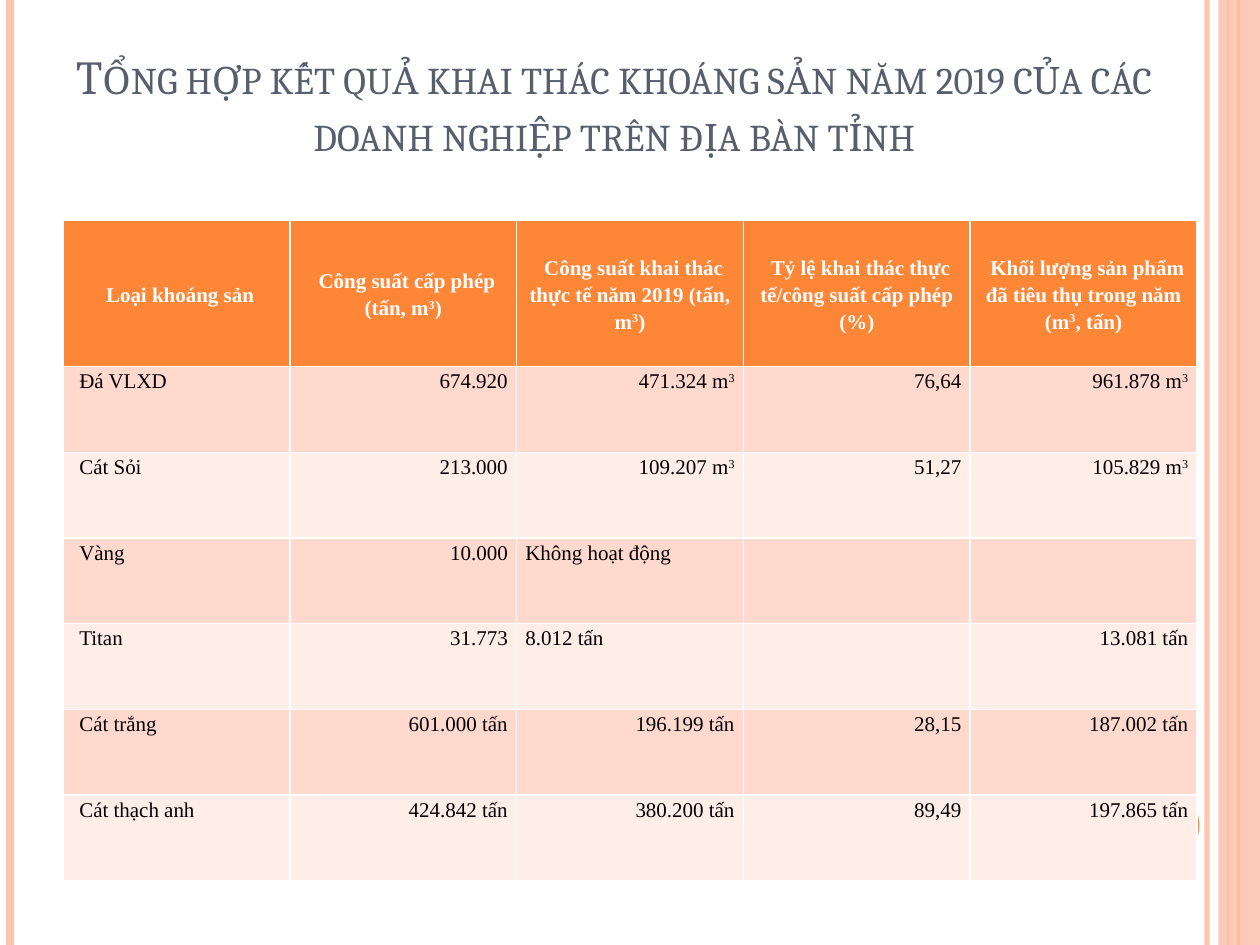
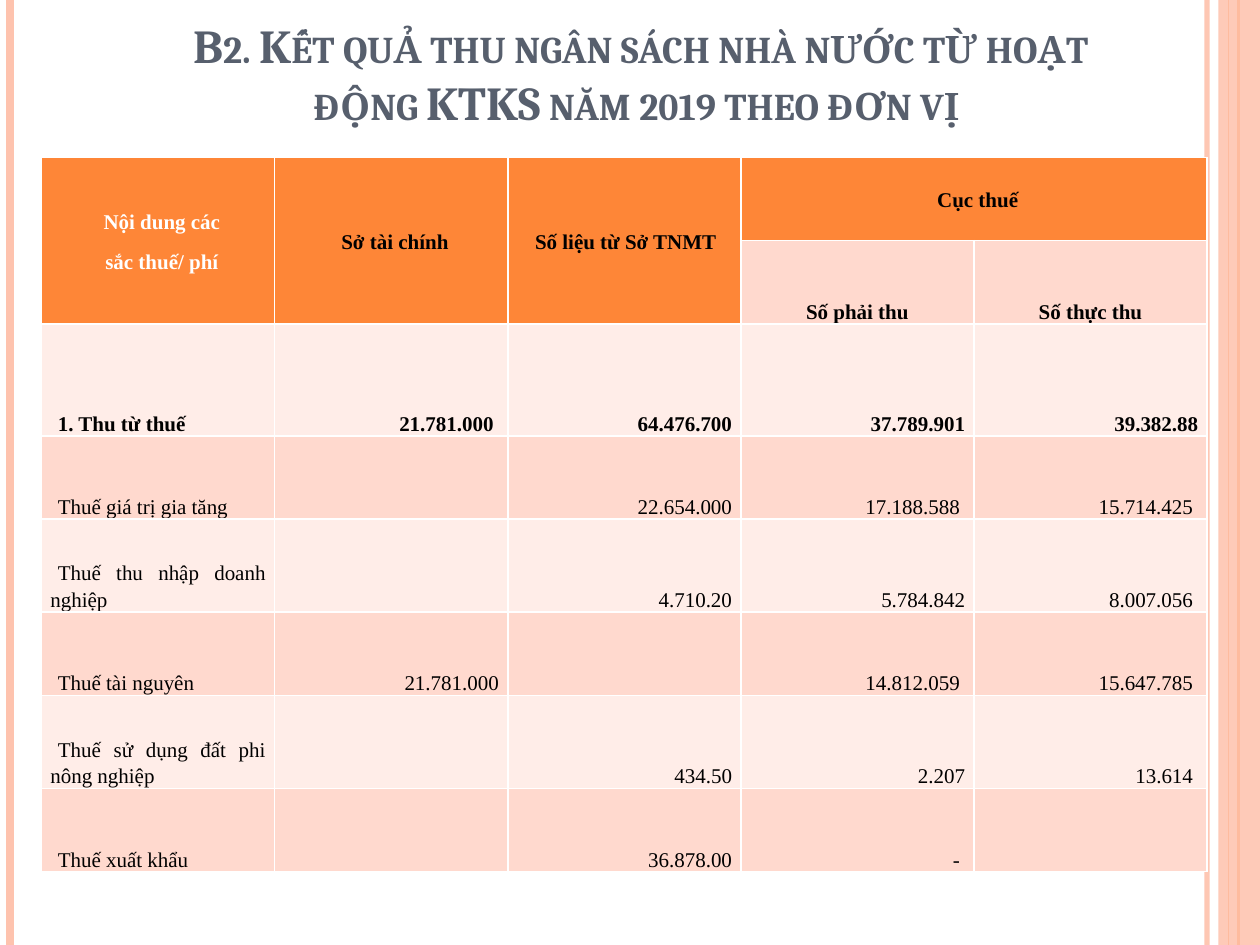
from lxml.etree import SubElement
from pptx import Presentation
from pptx.dml.color import RGBColor
from pptx.enum.shapes import MSO_CONNECTOR, MSO_SHAPE
from pptx.enum.text import MSO_ANCHOR, MSO_AUTO_SIZE, PP_ALIGN
from pptx.oxml.ns import qn
from pptx.util import Inches, Pt

COLORS = {
    "accent": "FE8637",
    "peach": "FEC3AE",
    "title": "575F6D",
    "band_dark": "FFD9CE",
    "band_light": "FFEDE8",
    "white": "FFFFFF",
    "black": "000000",
}
TITLE_FONT, TABLE_FONT = "Cambria", "Times New Roman"
# x, colour, width in points, opacity in percent
RULES = [(9.58, "peach", 3, 93), (0.08, "peach", 4.5, 100),
         (9.83, "accent", 1.5, 100), (9.75, "accent", 0.75, 100)]


def rgb(name):
    return RGBColor.from_string(COLORS[name])


def set_opacity(fill_parent, percent):
    color = next(fill_parent.iter(qn("a:srgbClr")))
    SubElement(color, qn("a:alpha")).set("val", str(percent * 1000))


def write(tf, text, font=TABLE_FONT, size=12, color="black", bold=False,
          align=PP_ALIGN.LEFT, indent=0, spacing=None, gap=0, small_caps=False):
    """Fill a text frame: a newline starts a paragraph, ^...^ is superscript."""
    for n, line in enumerate(text.split("\n")):
        p = tf.add_paragraph() if n else tf.paragraphs[0]
        p.alignment = align
        p.line_spacing = spacing
        p.space_before = p.space_after = Pt(gap)
        p._p.get_or_add_pPr().set("indent", str(Inches(indent)))
        for k, piece in enumerate(line.split("^")):
            if not piece:
                continue
            r = p.add_run()
            r.text = piece
            r.font.name, r.font.size, r.font.bold = font, Pt(size), bold
            r.font.color.rgb = rgb(color)
            if k % 2:
                r.font._element.set("baseline", "30000")
            if small_caps:
                r.font._element.set("cap", "small")


class Deck:
    """Holds the presentation style and the current slide."""

    def __init__(self):
        self.prs = Presentation()
        self.prs.slide_width, self.prs.slide_height = Inches(10), Inches(7.5)
        self.slide = None

    def new_slide(self):
        self.slide = self.prs.slides.add_slide(self.prs.slide_layouts[5])
        for x, color, width, opacity in RULES:
            self.rule(x, color, width, opacity)
        self.shape(MSO_SHAPE.RECTANGLE, (9.67, 0, 0.33, 7.5), "peach", 87)
        self.shape(MSO_SHAPE.OVAL, (8.92, 6.25, 0.6, 0.6), "accent")

    def rule(self, x, color, width, opacity):
        line = self.slide.shapes.add_connector(
            MSO_CONNECTOR.STRAIGHT, Inches(x), 0, Inches(x), Inches(7.5))
        line.line.color.rgb = rgb(color)
        line.line.width = Pt(width)
        set_opacity(line._element.spPr, opacity)
        SubElement(line._element.spPr, qn("a:effectLst"))

    def shape(self, kind, box, color, opacity=100):
        sp = self.slide.shapes.add_shape(kind, *map(Inches, box))
        sp.shadow.inherit = False
        sp.fill.solid()
        sp.fill.fore_color.rgb = rgb(color)
        sp.line.fill.background()
        set_opacity(sp._element.spPr, opacity)

    def title(self, text, box, bold=False):
        sp = self.slide.shapes.title
        sp.left, sp.top, sp.width, sp.height = map(Inches, box)
        tf = sp.text_frame
        tf.word_wrap, tf.auto_size = True, MSO_AUTO_SIZE.NONE
        tf.vertical_anchor = MSO_ANCHOR.BOTTOM
        write(tf, text, TITLE_FONT, 27, "title", bold, PP_ALIGN.CENTER, small_caps=True)

    def table(self, box, heights, rows):
        """Add a table with an accent header row and alternating bands."""
        x, y, width = box
        cols = len(rows[0])
        table = self.slide.shapes.add_table(
            len(rows), cols, *map(Inches, (x, y, width, sum(heights)))).table
        for col in table.columns:
            col.width = Inches(width / cols)
        for n, (row, height) in enumerate(zip(table.rows, heights)):
            row.height = Inches(height)
            band = ("band_dark" if n % 2 else "band_light") if n else "accent"
            for cell in row.cells:
                self.fill_cell(cell, band)
        return table

    def fill_cell(self, cell, color):
        cell.fill.solid()
        cell.fill.fore_color.rgb = rgb(color)

    def cell(self, cell, text, anchor, **fmt):
        cell.margin_left = cell.margin_right = Inches(0.07)
        cell.margin_top = cell.margin_bottom = 0
        cell.vertical_anchor = anchor
        write(cell.text_frame, text, spacing=1.15, gap=4, **fmt)


def mining_output(deck):
    deck.new_slide()
    deck.title("Tổng hợp kết quả khai thác khoáng sản năm 2019 của các "
               "doanh nghiệp trên địa bàn tỉnh", (0.5, 0.3, 8.75, 1.03))
    rows = [
        ["Loại khoáng sản", "Công suất cấp phép (tấn, m^3^)",
         "Công suất khai thác thực tế năm 2019 (tấn, m^3^)",
         "Tỷ lệ khai thác thực tế/công suất cấp phép (%)",
         "Khối lượng sản phẩm đã tiêu thụ trong năm (m^3^, tấn)"],
        ["Đá VLXD", "674.920", "471.324 m^3^", "76,64", "961.878 m^3^"],
        ["Cát Sỏi", "213.000", "109.207 m^3^", "51,27", "105.829 m^3^"],
        ["Vàng", "10.000", "Không hoạt động", "", ""],
        ["Titan", "31.773", "8.012 tấn", "", "13.081 tấn"],
        ["Cát trắng", "601.000 tấn", "196.199 tấn", "28,15", "187.002 tấn"],
        ["Cát thạch anh", "424.842 tấn", "380.200 tấn", "89,49", "197.865 tấn"],
    ]
    table = deck.table((0.5, 1.75, 9), [1.16] + [0.68] * 6, rows)
    left_aligned = {(3, 2), (4, 2)}
    for r, row in enumerate(rows):
        for c, text in enumerate(row):
            if r == 0:
                deck.cell(table.cell(r, c), text, MSO_ANCHOR.MIDDLE, color="white",
                          bold=True, align=PP_ALIGN.CENTER, indent=0.06)
                continue
            left = c == 0 or (r, c) in left_aligned
            deck.cell(table.cell(r, c), text, MSO_ANCHOR.TOP,
                      align=PP_ALIGN.LEFT if left else PP_ALIGN.RIGHT,
                      indent=0 if c == 2 else 0.06)


def budget_revenue(deck):
    deck.new_slide()
    deck.title("B2. Kết quả thu ngân sách nhà nước từ hoạt động KTKS năm 2019 "
               "theo đơn vị ", (1, 0.05, 8.17, 1.03), bold=True)
    rows = [
        ["Nội dung các\nsắc thuế/ phí", "Sở tài chính", "Số liệu từ Sở TNMT ",
         "Cục thuế", ""],
        ["", "", "", "Số phải thu", "Số thực thu"],
        ["1. Thu từ thuế", "21.781.000 ", "64.476.700", "37.789.901", "39.382.88"],
        ["Thuế giá trị gia tăng", "", "22.654.000", "17.188.588 ", "15.714.425 "],
        ["Thuế thu nhập doanh nghiệp", "", "4.710.20", "5.784.842", "8.007.056 "],
        ["Thuế tài nguyên", "21.781.000", "", "14.812.059 ", "15.647.785 "],
        ["Thuế sử dụng đất phi nông nghiệp", "", "434.50", "2.207", "13.614 "],
        ["Thuế xuất khẩu", "", "36.878.00", "- ", ""],
    ]
    heights = [0.66, 0.66, 0.89, 0.66, 0.74, 0.66, 0.74, 0.66]
    table = deck.table((0.33, 1.25, 9.25), heights, rows)
    for c in range(3):
        deck.fill_cell(table.cell(1, c), "accent")
        table.cell(0, c).merge(table.cell(1, c))
    table.cell(0, 3).merge(table.cell(0, 4))
    for r, row in enumerate(rows):
        for c, text in enumerate(row):
            if table.cell(r, c).is_spanned:
                continue
            if r < 2:
                align = PP_ALIGN.CENTER
            else:
                align = PP_ALIGN.RIGHT if c else PP_ALIGN.JUSTIFY
            deck.cell(table.cell(r, c), text,
                      MSO_ANCHOR.BOTTOM if r else MSO_ANCHOR.MIDDLE,
                      color="black" if r or c else "white", bold=r < 3,
                      align=align, indent=0 if r == 1 else 0.06)


def main():
    deck = Deck()
    mining_output(deck)
    budget_revenue(deck)
    deck.prs.save("out.pptx")


if __name__ == "__main__":
    main()
